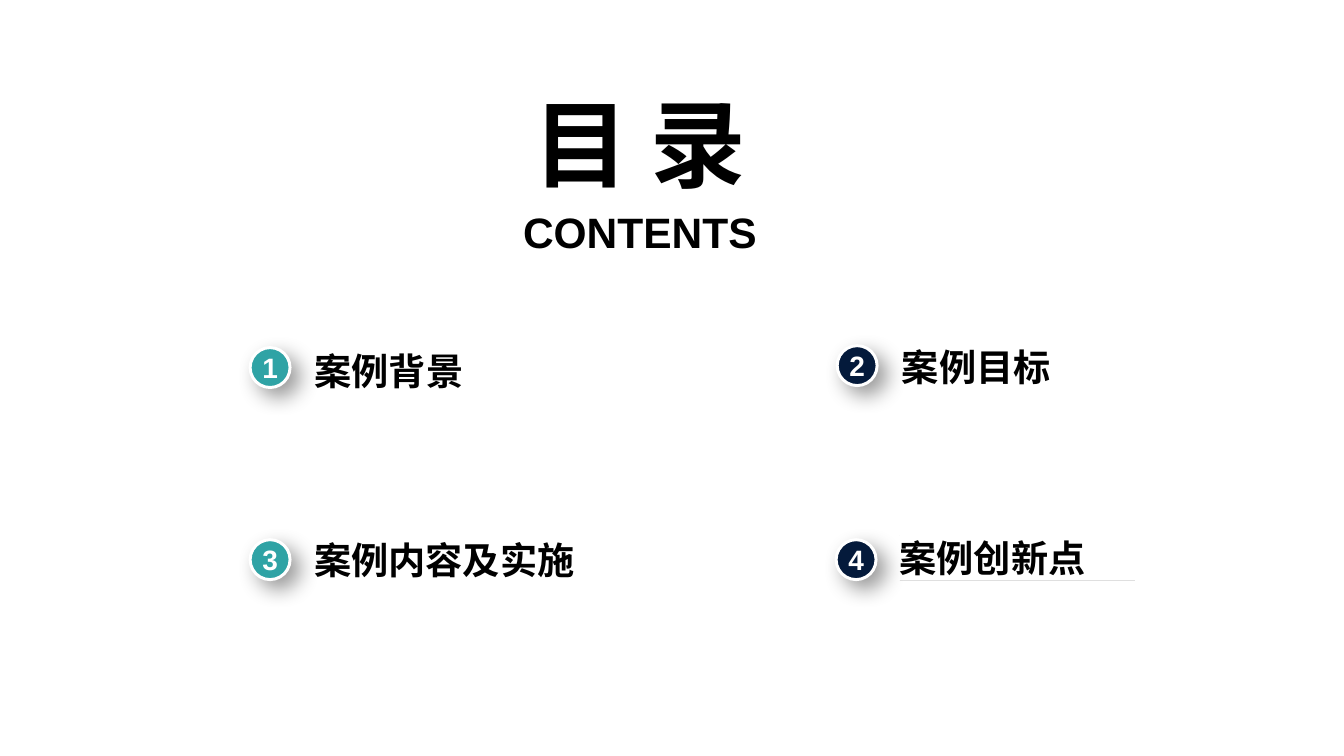
from dataclasses import dataclass

from lxml.etree import SubElement
from pptx import Presentation
from pptx.dml.color import RGBColor
from pptx.enum.shapes import MSO_SHAPE
from pptx.enum.text import MSO_ANCHOR, MSO_AUTO_SIZE, PP_ALIGN
from pptx.oxml.ns import qn
from pptx.shapes.autoshape import Shape
from pptx.slide import Slide
from pptx.util import Inches, Length, Pt

BLACK = RGBColor(0x00, 0x00, 0x00)
WHITE = RGBColor(0xFF, 0xFF, 0xFF)
TEAL = RGBColor(0x2F, 0xA3, 0xA5)
NAVY = RGBColor(0x04, 0x1A, 0x3B)

FONT = "Arial"
SLIDE_WIDTH = Inches(14.06)
SLIDE_HEIGHT = Inches(7.91)
BADGE_WIDTH, BADGE_HEIGHT = 2.97, 5.28
LABEL_HEIGHT = 5.94


def across(percent: float) -> Length:
    return Length(round(SLIDE_WIDTH * percent / 100))


def down(percent: float) -> Length:
    return Length(round(SLIDE_HEIGHT * percent / 100))


@dataclass(frozen=True)
class Area:
    left: float
    top: float
    width: float
    height: float

    def lengths(self) -> tuple[Length, Length, Length, Length]:
        return across(self.left), down(self.top), across(self.width), down(self.height)


@dataclass(frozen=True)
class Chapter:
    label: str
    color: RGBColor
    badge_left: float
    badge_top: float
    label_left: float
    label_top: float
    label_width: float = 17.5
    underlined: bool = False


TITLE_AREA = Area(37.41, 11.13, 20.41, 15.3)
SUBTITLE_AREA = Area(38.55, 27.24, 18.14, 6.83)
CHAPTERS = (
    Chapter("案例背景", TEAL, 18.61, 45.98, 23.42, 46.02),
    Chapter("案例目标", NAVY, 62.29, 45.72, 67.11, 45.51),
    Chapter("案例内容及实施", TEAL, 18.61, 71.39, 23.4, 71.05, 20.48),
    Chapter("案例创新点", NAVY, 62.21, 71.39, 66.95, 70.78, underlined=True),
)


def write_text(
    box: Shape,
    text: str,
    *,
    size: float,
    color: RGBColor = BLACK,
    align: PP_ALIGN = PP_ALIGN.CENTER,
    anchor: MSO_ANCHOR = MSO_ANCHOR.MIDDLE,
) -> None:
    frame = box.text_frame
    frame.margin_left = frame.margin_right = 0
    frame.margin_top = frame.margin_bottom = 0
    frame.word_wrap = True
    frame.auto_size = MSO_AUTO_SIZE.NONE
    frame.vertical_anchor = anchor
    para = frame.paragraphs[0]
    para.alignment = align
    span = para.add_run()
    span.text = text
    span.font.name = FONT
    span.font.size = Pt(size)
    span.font.bold = True
    span.font.color.rgb = color


def add_soft_shadow(badge: Shape) -> None:
    badge.shadow.inherit = False
    effects = badge.element.spPr.find(qn("a:effectLst"))
    shadow = SubElement(
        effects,
        qn("a:outerShdw"),
        blurRad=str(Pt(16)),
        dist=str(Pt(9)),
        dir=str(45 * 60000),
        algn="tl",
        rotWithShape="0",
    )
    tint = SubElement(shadow, qn("a:srgbClr"), val=str(BLACK))
    SubElement(tint, qn("a:alpha"), val="40000")


def draw_badge(page: Slide, number: int, chapter: Chapter) -> None:
    area = Area(chapter.badge_left, chapter.badge_top, BADGE_WIDTH, BADGE_HEIGHT)
    badge = page.shapes.add_shape(MSO_SHAPE.OVAL, *area.lengths())
    badge.fill.solid()
    badge.fill.fore_color.rgb = chapter.color
    badge.line.color.rgb = WHITE
    badge.line.width = Pt(2.25)
    add_soft_shadow(badge)
    write_text(badge, str(number), size=21.1, color=WHITE)


def draw_label(page: Slide, chapter: Chapter) -> None:
    area = Area(
        chapter.label_left, chapter.label_top, chapter.label_width, LABEL_HEIGHT
    )
    left, top, width, height = area.lengths()
    right, bottom = left + width, top + height
    outline = page.shapes.build_freeform(left, bottom)
    outline.add_line_segments([(right, bottom), (left, bottom)])
    outline.move_to(left, top)
    outline.add_line_segments([(left, top), (left, top)])
    label = outline.convert_to_shape()
    label.shadow.inherit = False
    label.line.fill.background()
    if chapter.underlined:
        label.fill.solid()
        label.fill.fore_color.rgb = BLACK
    else:
        label.fill.background()
    write_text(label, chapter.label, size=28, align=PP_ALIGN.LEFT)


def main() -> None:
    deck = Presentation()
    deck.slide_width = SLIDE_WIDTH
    deck.slide_height = SLIDE_HEIGHT
    page = deck.slides.add_slide(deck.slide_layouts.get_by_name("Title Only"))

    title = page.shapes.title
    title.left, title.top, title.width, title.height = TITLE_AREA.lengths()
    write_text(title, "目 录", size=72)
    subtitle = page.shapes.add_textbox(*SUBTITLE_AREA.lengths())
    write_text(subtitle, "CONTENTS", size=32, anchor=MSO_ANCHOR.TOP)

    for number, chapter in enumerate(CHAPTERS, start=1):
        draw_badge(page, number, chapter)
        draw_label(page, chapter)

    deck.save("out.pptx")


if __name__ == "__main__":
    main()
